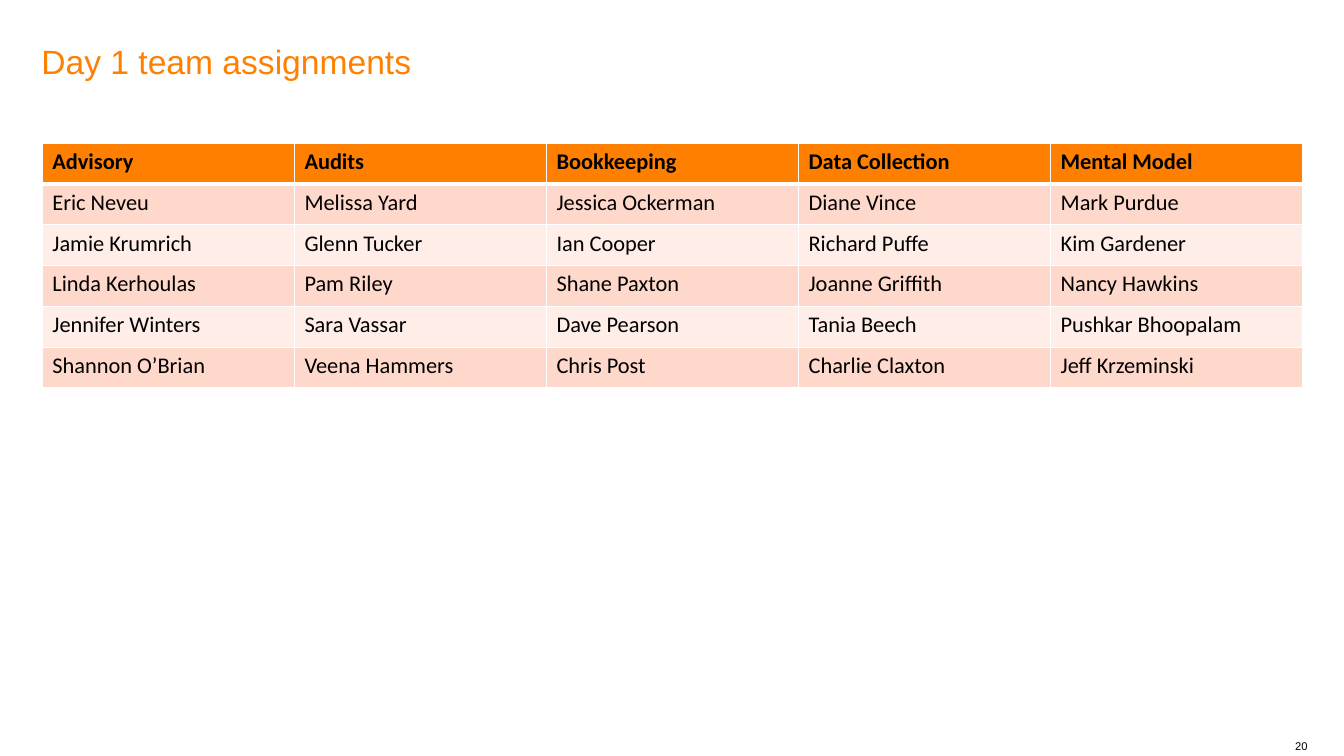
from dataclasses import dataclass

from lxml.etree import SubElement
from pptx import Presentation
from pptx.dml.color import RGBColor
from pptx.enum.text import MSO_ANCHOR, PP_ALIGN
from pptx.oxml.ns import qn
from pptx.util import Inches, Pt

COLORS = {
    "orange": "FF8000",
    "band_dark": "FFD8CC",
    "band_light": "FFEDE7",
    "black": "000000",
    "white": "FFFFFF",
}
COL_WIDTH, ROW_HEIGHT = 2.5, 0.405


@dataclass
class Team:
    name: str
    members: list[str]


@dataclass
class TextStyle:
    font: str
    size: float
    color: str
    bold: bool = False
    align: PP_ALIGN = PP_ALIGN.LEFT


TITLE = TextStyle("Arial", 24, "orange")
PAGE = TextStyle("Arial", 8, "black", align=PP_ALIGN.RIGHT)
HEADER = TextStyle("Calibri", 16, "black", bold=True)
BODY = TextStyle("Calibri", 16, "black")

TEAMS = [
    Team("Advisory", ["Eric Neveu", "Jamie Krumrich", "Linda Kerhoulas",
                      "Jennifer Winters", "Shannon O’Brian"]),
    Team("Audits", ["Melissa Yard", "Glenn Tucker", "Pam Riley",
                    "Sara Vassar", "Veena Hammers"]),
    Team("Bookkeeping", ["Jessica Ockerman", "Ian Cooper", "Shane Paxton",
                         "Dave Pearson", "Chris Post"]),
    Team("Data Collection", ["Diane Vince", "Richard Puffe", "Joanne Griffith",
                             "Tania Beech", "Charlie Claxton"]),
    Team("Mental Model", ["Mark Purdue", "Kim Gardener", "Nancy Hawkins",
                          "Pushkar Bhoopalam", "Jeff Krzeminski"]),
]


def rgb(name: str) -> RGBColor:
    return RGBColor.from_string(COLORS[name])


def write(tf, text: str, style: TextStyle) -> None:
    p = tf.paragraphs[0]
    p.alignment = style.align
    r = p.add_run()
    r.text = text
    formats = {"name": style.font, "size": Pt(style.size), "bold": style.bold}
    for key, value in formats.items():
        setattr(r.font, key, value)
    r.font.color.rgb = rgb(style.color)


def place(sp, left: float, top: float, width: float, height: float) -> None:
    box = {"left": left, "top": top, "width": width, "height": height}
    for key, value in box.items():
        setattr(sp, key, Inches(value))


def set_frame(tf) -> None:
    formats = {"margin_left": 0, "margin_top": 0, "margin_right": 0,
               "margin_bottom": 0, "word_wrap": True,
               "vertical_anchor": MSO_ANCHOR.TOP}
    for key, value in formats.items():
        setattr(tf, key, value)


def set_borders(cell, widths: dict[str, float]) -> None:
    tc_pr = cell._tc.get_or_add_tcPr()
    for index, (side, width) in enumerate(widths.items()):
        ln = SubElement(tc_pr, qn(f"a:ln{side}"), w=str(Pt(width)))
        fill = SubElement(ln, qn("a:solidFill"))
        SubElement(fill, qn("a:srgbClr"), val=COLORS["white"])
        tc_pr.insert(index, ln)  # borders precede the fill


def add_team_table(s, teams: list[Team]) -> None:
    n_rows = 1 + len(teams[0].members)
    table = s.shapes.add_table(
        n_rows, len(teams), Inches(0.42), Inches(1.42),
        Inches(COL_WIDTH * len(teams)), Inches(ROW_HEIGHT * n_rows)).table
    for row in table.rows:
        row.height = Inches(ROW_HEIGHT)
    for col, team in enumerate(teams):
        table.columns[col].width = Inches(COL_WIDTH)
        for row, text in enumerate([team.name, *team.members]):
            cell = table.cell(row, col)
            band = "band_dark" if row % 2 else "band_light"
            cell.fill.solid()
            cell.fill.fore_color.rgb = rgb("orange" if row == 0 else band)
            # The header is set off by a thicker rule
            set_borders(cell, {"L": 1, "R": 1, "T": 3 if row == 1 else 1,
                               "B": 3 if row == 0 else 1})
            write(cell.text_frame, text, HEADER if row == 0 else BODY)


def main() -> None:
    prs = Presentation()
    prs.slide_width, prs.slide_height = Inches(13.33), Inches(7.5)
    s = prs.slides.add_slide(prs.slide_layouts[5])

    # Title
    title = s.shapes.title
    place(title, 0.41, 0.41, 12.49, 0.9)
    set_frame(title.text_frame)
    write(title.text_frame, "Day 1 team assignments", TITLE)

    # Team table
    add_team_table(s, TEAMS)

    # Page number
    page = s.shapes.add_textbox(0, 0, 0, 0)
    place(page, 12.73, 7.33, 0.24, 0.13)
    set_frame(page.text_frame)
    write(page.text_frame, "20", PAGE)

    prs.save("out.pptx")


if __name__ == "__main__":
    main()
